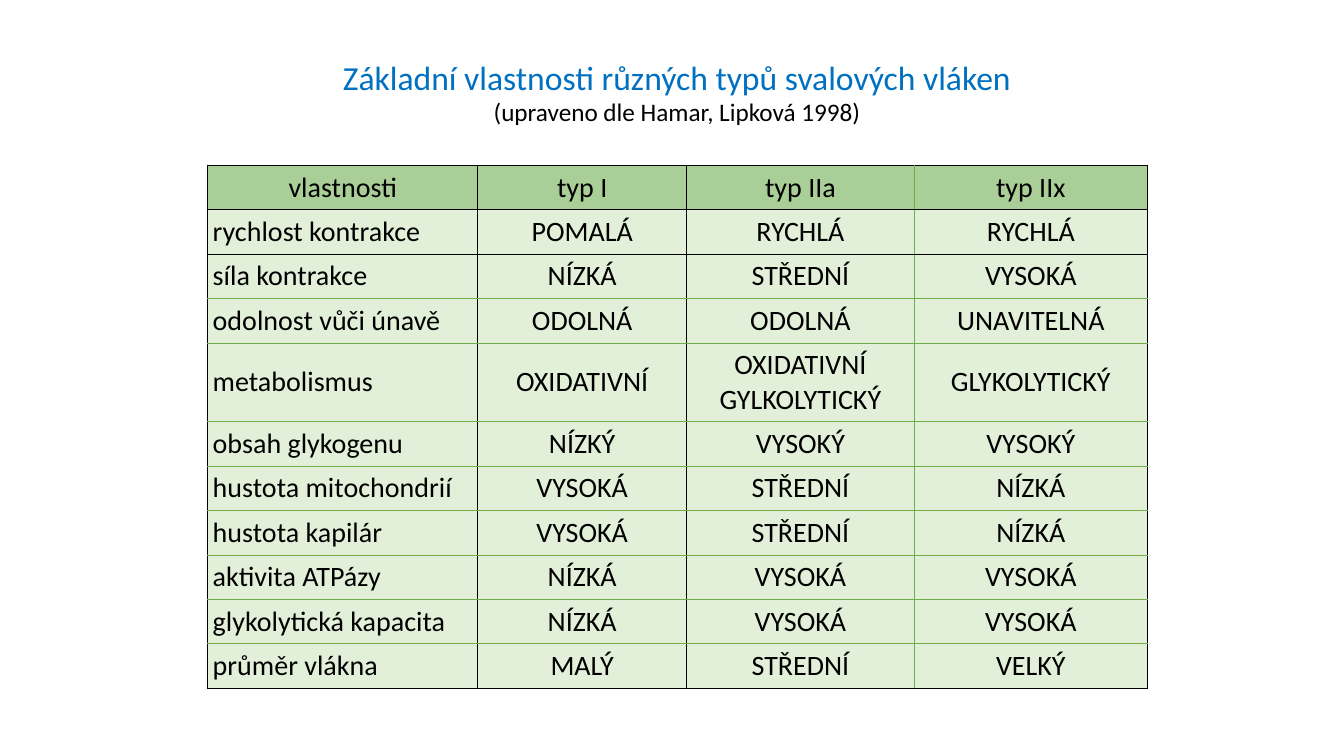
from lxml.etree import SubElement
from pptx import Presentation
from pptx.dml.color import RGBColor
from pptx.enum.text import MSO_ANCHOR, MSO_AUTO_SIZE, PP_ALIGN
from pptx.oxml.ns import qn
from pptx.util import Inches, Pt

COLORS = {"black": "000000", "blue": "0070C0", "green": "70AD47",
          "header": "A9CE98", "body": "E2F0D9"}


def write(para, text, size, color="black", align=PP_ALIGN.CENTER):
    para.alignment = align
    span = para.add_run()
    span.text = text
    span.font.name = "Calibri"
    span.font.size = Pt(size)
    span.font.color.rgb = RGBColor.from_string(COLORS[color])


def add_border(cell, side, color, width):
    line = SubElement(cell._tc.get_or_add_tcPr(), qn(f"a:ln{side}"), w=str(Pt(width)))
    fill = SubElement(line, qn("a:solidFill"))
    SubElement(fill, qn("a:srgbClr"), val=COLORS[color])


deck = Presentation()
deck.slide_width, deck.slide_height = Inches(13.33), Inches(7.5)
page = deck.slides.add_slide(deck.slide_layouts[5])

# Title with its source line
title = page.shapes.title
title.left, title.top = Inches(2.05), Inches(0.51)
title.width, title.height = Inches(9.33), Inches(0.81)
frame = title.text_frame
frame.word_wrap = True
frame.auto_size = MSO_AUTO_SIZE.NONE
frame.vertical_anchor = MSO_ANCHOR.TOP
write(frame.paragraphs[0], "Základní vlastnosti různých typů svalových vláken", 24, "blue")
write(frame.add_paragraph(), "(upraveno dle Hamar, Lipková 1998)", 18)

# Table of fibre types
rows = [
    ("vlastnosti", "typ I", "typ IIa", "typ IIx"),
    ("rychlost kontrakce", "POMALÁ", "RYCHLÁ", "RYCHLÁ"),
    ("síla kontrakce", "NÍZKÁ", "STŘEDNÍ", "VYSOKÁ"),
    ("odolnost vůči únavě", "ODOLNÁ", "ODOLNÁ", "UNAVITELNÁ"),
    ("metabolismus", "OXIDATIVNÍ", "OXIDATIVNÍ GYLKOLYTICKÝ", "GLYKOLYTICKÝ"),
    ("obsah glykogenu", "NÍZKÝ", "VYSOKÝ", "VYSOKÝ"),
    ("hustota mitochondrií", "VYSOKÁ", "STŘEDNÍ", "NÍZKÁ"),
    ("hustota kapilár", "VYSOKÁ", "STŘEDNÍ", "NÍZKÁ"),
    ("aktivita ATPázy", "NÍZKÁ", "VYSOKÁ", "VYSOKÁ"),
    ("glykolytická kapacita", "NÍZKÁ", "VYSOKÁ", "VYSOKÁ"),
    ("průměr vlákna", "MALÝ", "STŘEDNÍ", "VELKÝ"),
]
widths = [2.68, 2.07, 2.26, 2.31]
table = page.shapes.add_table(len(rows), len(widths), Inches(2.06), Inches(1.64),
                              Inches(9.33), Inches(5.15)).table
for column, width in zip(table.columns, widths):
    column.width = Inches(width)

# Grid lines, counted from the left and from the top
thick, thin, green = ("black", 1), ("black", 0.5), ("green", 0.5)
vertical = [thick, thick, thin, green, thick]
horizontal = [thick, thick, thin] + [green] * (len(rows) - 3) + [thick]

for r, texts in enumerate(rows):
    table.rows[r].height = Inches(0.77 if texts[0] == "metabolismus" else 0.44)
    for c, text in enumerate(texts):
        cell = table.cell(r, c)
        cell.margin_left = cell.margin_right = Inches(0.05)
        cell.margin_top = cell.margin_bottom = Inches(0.05)
        cell.vertical_anchor = MSO_ANCHOR.MIDDLE
        add_border(cell, "L", *vertical[c])
        add_border(cell, "R", *vertical[c + 1])
        add_border(cell, "T", *horizontal[r])
        add_border(cell, "B", *horizontal[r + 1])
        cell.fill.solid()
        cell.fill.fore_color.rgb = RGBColor.from_string(COLORS["body" if r else "header"])
        align = PP_ALIGN.LEFT if r and c == 0 else PP_ALIGN.CENTER
        write(cell.text_frame.paragraphs[0], text, 20, align=align)

deck.save("out.pptx")
